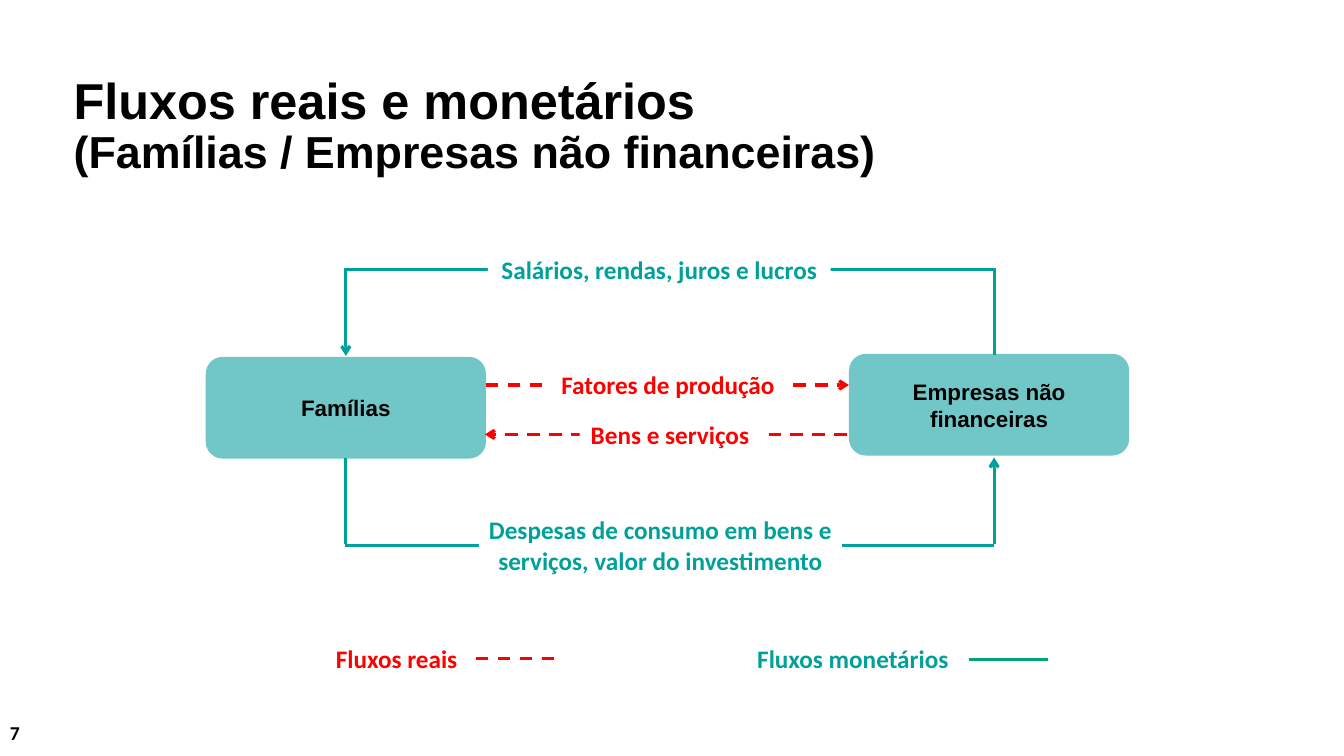
"""Build the slide on real and monetary flows."""
import pptx
import pptx.util
import pptx.dml.color
import pptx.enum.dml
import pptx.enum.shapes
import pptx.enum.text
import pptx.oxml
import pptx.oxml.ns

PX = 9144
RGB = pptx.dml.color.RGBColor
BLACK = RGB(0x00, 0x00, 0x00)
WHITE = RGB(0xFF, 0xFF, 0xFF)
RED = RGB(0xFF, 0x00, 0x00)
TEAL = RGB(0x00, 0xA0, 0x9B)
GREEN = RGB(0x00, 0xA3, 0x78)
AQUA = RGB(0x71, 0xC6, 0xC8)
ALIGN = pptx.enum.text.PP_ALIGN
ANCHOR = pptx.enum.text.MSO_ANCHOR
SHAPE = pptx.enum.shapes.MSO_SHAPE


def scale(*nums):
    """Turn px into EMU."""
    return [pptx.util.Emu(num * PX) for num in nums]


def add_run(para, text, size, face, color):
    """Add one bold run to a paragraph."""
    run = para.add_run()
    run.text = text
    font = run.font
    font.size = pptx.util.Pt(size)
    font.name = face
    font.bold = True
    font.color.rgb = color


def add_box(shapes, kind, area, fill, text, size, face, color, align=ALIGN.CENTER):
    """Add a filled shape with text."""
    box = shapes.add_shape(kind, *scale(*area))
    box.shadow.inherit = False
    box.fill.solid()
    box.fill.fore_color.rgb = fill
    box.line.fill.background()
    frame = box.text_frame
    frame.word_wrap = True
    frame.margin_left, frame.margin_right = scale(9, 9)
    frame.vertical_anchor = ANCHOR.MIDDLE
    para = frame.paragraphs[0]
    para.alignment = align
    add_run(para, text, size, face, color)


def add_sector(shapes, left, top, text):
    """Add a rounded box for one sector."""
    area = (left, top, 278, 101)
    add_box(shapes, SHAPE.ROUNDED_RECTANGLE, area, AQUA, text, 16, "Arial", BLACK)


def add_label(shapes, area, text, color, align=ALIGN.CENTER):
    """Add a white label that covers the line behind it."""
    add_box(shapes, SHAPE.RECTANGLE, area, WHITE, text, 18, "Calibri", color, align)


def add_line(shapes, ends, color, dash=False, arrow=False):
    """Add a straight line, with an arrowhead at its end if asked."""
    kind = pptx.enum.shapes.MSO_CONNECTOR.STRAIGHT
    link = shapes.add_connector(kind, *scale(*ends))
    line = link.line
    line.color.rgb = color
    line.width = pptx.util.Pt(2.25)
    if dash:
        line.dash_style = pptx.enum.dml.MSO_LINE.DASH
    props = link._element.spPr
    if arrow:
        tip = pptx.oxml.parse_xml(
            f'<a:tailEnd {pptx.oxml.ns.nsdecls("a")} type="arrow"/>')
        props.find(pptx.oxml.ns.qn("a:ln")).append(tip)
    props.append(pptx.oxml.parse_xml(
        f'<a:effectLst {pptx.oxml.ns.nsdecls("a")}/>'))


def add_key(slide, area, text, color, ends, tint, dash):
    """Add one grouped legend entry."""
    group = slide.shapes.add_group_shape()
    add_label(group.shapes, area, text, color, ALIGN.LEFT)
    add_line(group.shapes, ends, tint, dash)


def set_title(title):
    """Place and fill the title."""
    title.left, title.top, title.width, title.height = scale(63, 70, 1224, 132)
    frame = title.text_frame
    frame.word_wrap = True
    frame.auto_size = pptx.enum.text.MSO_AUTO_SIZE.NONE
    frame.vertical_anchor = ANCHOR.TOP
    para = frame.paragraphs[0]
    para.alignment = ALIGN.LEFT
    para.line_spacing = 0.9
    add_run(para, "Fluxos reais e monetários", 36, "Arial", BLACK)
    para.add_line_break()
    add_run(para, "(Famílias / Empresas não financeiras)", 32, "Arial", BLACK)


def add_number(shapes, text):
    """Add the slide number."""
    frame = shapes.add_textbox(*scale(0, 710, 300, 40)).text_frame
    frame.word_wrap = True
    add_run(frame.paragraphs[0], text, 14, "Calibri", BLACK)


def main():
    """Build and save the slide."""
    deck = pptx.Presentation()
    deck.slide_width, deck.slide_height = scale(1333, 750)
    slide = deck.slides.add_slide(deck.slide_layouts[5])
    shapes = slide.shapes
    set_title(shapes.title)
    add_number(shapes, "7")
    add_sector(shapes, 204, 354, "Famílias")
    add_sector(shapes, 842, 351, "Empresas não financeiras")

    add_line(shapes, (482, 382, 842, 382), RED, dash=True, arrow=True)
    add_line(shapes, (840, 431, 481, 431), RED, dash=True, arrow=True)
    for ends, arrow in (
        ((343, 267, 986, 267), False),
        ((343, 266, 343, 353), True),
        ((986, 266, 986, 352), False),
        ((342, 541, 986, 541), False),
        ((343, 454, 343, 540), False),
        ((986, 540, 986, 454), True),
    ):
        add_line(shapes, ends, TEAL, arrow=arrow)

    for area, text, color in (
        ((545, 361, 235, 40), "Fatores de produção", RED),
        ((575, 411, 179, 40), "Bens e serviços", RED),
        ((484, 247, 340, 40), "Salários, rendas, juros e lucros", TEAL),
        ((475, 505, 360, 71),
         "Despesas de consumo em bens e serviços, valor do investimento", TEAL),
    ):
        add_label(shapes, area, text, color)

    add_key(slide, (324, 633, 195, 40), "Fluxos reais", RED,
            (472, 653, 550, 653), RED, True)
    add_key(slide, (742, 633, 228, 40), "Fluxos monetários", TEAL,
            (961, 654, 1039, 654), GREEN, False)
    deck.save("out.pptx")


if __name__ == "__main__":
    main()
